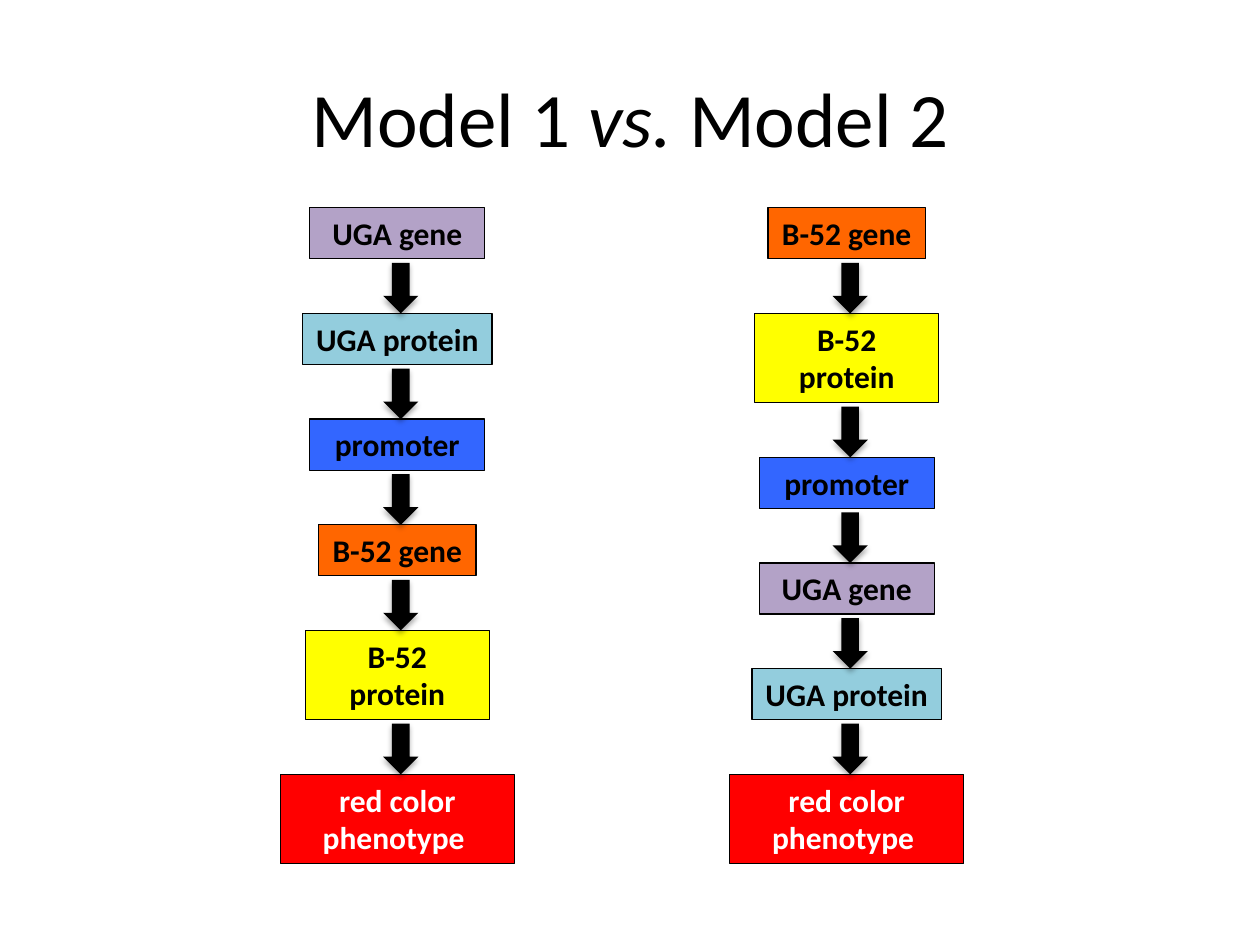
"""Build a slide that compares two gene pathway models."""
from lxml import etree
from pptx import Presentation
from pptx import util as u
from pptx.dml.color import RGBColor
from pptx.enum import shapes, text
from pptx.oxml import ns

BLACK, WHITE = "000000", "FFFFFF"
SHORT, TALL, GAP, TOP = 1.03, 1.8, 1.1, 4.19

PARTS = {
    "UGA gene": ("B3A2C7", 3.53, SHORT),
    "UGA protein": ("93CDDD", 3.82, SHORT),
    "promoter": ("3366FF", 3.53, SHORT),
    "B-52 gene": ("FF6600", 3.18, SHORT),
    "B-52 protein": ("FFFF00", 3.71, TALL),
    "red color phenotype ": ("FF0000", 4.72, TALL),
}
MODELS = [
    (8.01, ["UGA gene", "UGA protein", "promoter",
            "B-52 gene", "B-52 protein", "red color phenotype "]),
    (17.07, ["B-52 gene", "B-52 protein", "promoter",
             "UGA gene", "UGA protein", "red color phenotype "]),
]


def color(code):
    return RGBColor.from_string(code)


def write(para, words, size=18, tone=BLACK, bold=False, italic=False):
    para.alignment = text.PP_ALIGN.CENTER
    run = para.add_run()
    run.text = words
    font = run.font
    font.name, font.size = "Calibri", u.Pt(size)
    font.bold, font.italic = bold, italic
    font.color.rgb = color(tone)


class Deck:
    def __init__(self):
        self.file = Presentation()
        self.file.slide_width, self.file.slide_height = u.Cm(25.4), u.Cm(19.05)
        self.slide = self.file.slides.add_slide(self.file.slide_layouts[5])

    def title(self, runs):
        head = self.slide.shapes.title
        head.left, head.top = u.Cm(1.27), u.Cm(0.76)
        head.width, head.height = u.Cm(22.86), u.Cm(3.18)
        head.text_frame.vertical_anchor = text.MSO_ANCHOR.MIDDLE
        for words, italic in runs:
            write(head.text_frame.paragraphs[0], words, size=44, italic=italic)

    def shape(self, kind, mid, top, width, height, fill):
        item = self.slide.shapes.add_shape(
            kind, u.Cm(mid - width / 2), u.Cm(top), u.Cm(width), u.Cm(height))
        item.shadow.inherit = False
        item.fill.solid()
        item.fill.fore_color.rgb = color(fill)
        return item

    def box(self, name, mid, top):
        fill, width, height = PARTS[name]
        item = self.shape(shapes.MSO_SHAPE.RECTANGLE, mid, top, width, height, fill)
        item.line.color.rgb = color(BLACK)
        item.line.width = u.Pt(0.75)
        frame = item.text_frame
        frame.word_wrap = name != "UGA protein"
        frame.auto_size = text.MSO_AUTO_SIZE.SHAPE_TO_FIT_TEXT
        frame.vertical_anchor = text.MSO_ANCHOR.TOP
        tone = WHITE if fill == "FF0000" else BLACK
        write(frame.paragraphs[0], name, tone=tone, bold=True)

    def arrow(self, mid, end):
        item = self.shape(shapes.MSO_SHAPE.DOWN_ARROW, mid, end - 1.02, 0.71, 1.02, BLACK)
        item.line.fill.background()
        glow = item._element.spPr.find(ns.qn("a:effectLst"))
        cast = etree.SubElement(glow, ns.qn("a:outerShdw"), blurRad="40000",
                                dist="23000", dir="5400000", rotWithShape="0")
        tint = etree.SubElement(cast, ns.qn("a:srgbClr"), val=BLACK)
        etree.SubElement(tint, ns.qn("a:alpha"), val="35000")

    def model(self, mid, names):
        top = TOP
        for name in names:
            self.box(name, mid, top)
            if top > TOP:
                self.arrow(mid + 0.07, top)
            top += PARTS[name][2] + GAP


def main():
    deck = Deck()
    deck.title([("Model 1 ", False), ("vs. ", True), ("Model 2", False)])
    for mid, names in MODELS:
        deck.model(mid, names)
    deck.file.save("out.pptx")


if __name__ == "__main__":
    main()
